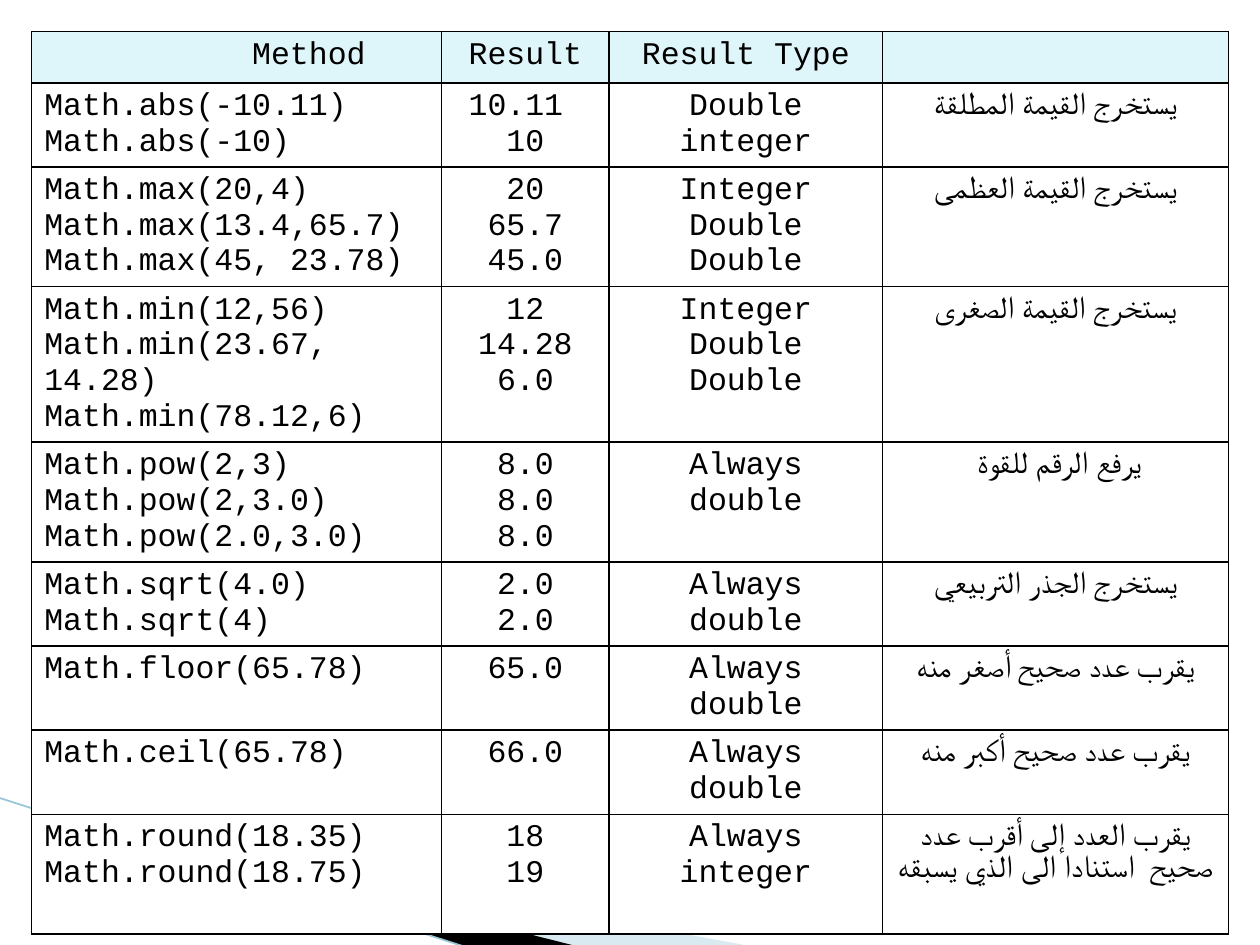
from dataclasses import dataclass

from lxml import etree
from pptx import Presentation
from pptx.dml.color import RGBColor
from pptx.enum import shapes, text
from pptx.oxml import ns
from pptx.util import Cm, Pt

FONT = "Courier New"
BLACK, WHITE, HEADER = "000000", "FFFFFF", "DEF5FA"
COLUMN_WIDTHS = (8.26, 3.38, 5.51, 6.98)
LINE_HEIGHT, CELL_PADDING = 0.72, 0.25
HEADER_INDENT = 4.19


@dataclass
class MethodRow:
    calls: tuple[str, ...]
    results: tuple[str, ...]
    types: tuple[str, ...]
    meaning: str
    lines: int
    rtl: bool = False


@dataclass
class Wedge:
    points: tuple[tuple[float, float], ...]
    color: str
    opacity: int = 100


ALWAYS_DOUBLE = ("Always", "double")
NUMBER_TYPES = ("Integer", "Double", "Double")

METHODS = (
    MethodRow(("Math.abs(-10.11)", "Math.abs(-10)"), ("10.11 ", "10"),
              ("Double", "integer"), "يستخرج القيمة المطلقة", 2),
    MethodRow(("Math.max(20,4)", "Math.max(13.4,65.7) Math.max(45, 23.78)"),
              ("20", "65.7", "45.0"), NUMBER_TYPES,
              "يستخرج القيمة العظمى", 3, rtl=True),
    MethodRow(("Math.min(12,56)", "Math.min(23.67, 14.28)", "Math.min(78.12,6)"),
              ("12", "14.28", "6.0"), NUMBER_TYPES,
              "يستخرج القيمة الصغرى", 4),
    MethodRow(("Math.pow(2,3)", "Math.pow(2,3.0)", "Math.pow(2.0,3.0)"),
              ("8.0", "8.0", "8.0"), ALWAYS_DOUBLE,
              "يرفع الرقم للقوة ", 3, rtl=True),
    MethodRow(("Math.sqrt(4.0)", "Math.sqrt(4)"), ("2.0", "2.0"),
              ALWAYS_DOUBLE, "يستخرج الجذر التربيعي", 2),
    MethodRow(("Math.floor(65.78)",), ("65.0",), ALWAYS_DOUBLE,
              "يقرب عدد صحيح أصغر منه", 2),
    MethodRow(("Math.ceil(65.78)",), ("66.0",), ALWAYS_DOUBLE,
              "يقرب عدد صحيح أكبر منه", 2),
    MethodRow(("Math.round(18.35)", "Math.round(18.75)"), ("18", "19"),
              ("Always", "integer"),
              "يقرب العدد إلى أقرب عدد صحيح  استنادا الى الذي يسبقه", 3),
)

WEDGES = (
    Wedge(((1.4, 16.53), (15.11, 19.07), (11.58, 19.07), (1.4, 16.51)), "A0CBDC", 40),
    Wedge(((1.35, 16.48), (11.61, 19.07), (9.45, 19.1), (1.37, 16.51)), BLACK),
)


def rgb(color: str) -> RGBColor:
    return RGBColor.from_string(color)


def add_wedge(s, wedge: Wedge) -> None:
    points = [(Cm(x), Cm(y)) for x, y in wedge.points]
    builder = s.shapes.build_freeform(*points[0], scale=1.0)
    builder.add_line_segments(points[1:], close=True)
    sp = builder.convert_to_shape()
    sp.shadow.inherit = False
    sp.line.fill.background()
    sp.fill.solid()
    sp.fill.fore_color.rgb = rgb(wedge.color)
    if wedge.opacity < 100:
        clr = sp.fill._xPr.find(".//" + ns.qn("a:srgbClr"))
        etree.SubElement(clr, ns.qn("a:alpha"), val=str(wedge.opacity * 1000))


def add_edge_line(s) -> None:
    line = s.shapes.add_connector(shapes.MSO_CONNECTOR.STRAIGHT,
                                  Cm(-0.03), Cm(16.08), Cm(9.42), Cm(19.1))
    line.line.color.rgb = rgb("97C5D8")
    line.line.width = Pt(0.95)
    etree.SubElement(line._element.spPr, ns.qn("a:effectLst"))


def style_cell(cell, fill: str) -> None:
    """Give the cell thin black borders and a plain fill."""
    tc_pr = cell._tc.get_or_add_tcPr()
    for side in ("lnL", "lnR", "lnT", "lnB"):
        ln = etree.SubElement(tc_pr, ns.qn(f"a:{side}"), w=str(Pt(1)))
        solid = etree.SubElement(ln, ns.qn("a:solidFill"))
        etree.SubElement(solid, ns.qn("a:srgbClr"), val=BLACK)
    cell.fill.solid()
    cell.fill.fore_color.rgb = rgb(fill)


def write_cell(cell, lines: tuple[str, ...], centred: bool = True,
               rtl: bool = False, indent: float = 0) -> None:
    tf = cell.text_frame
    for i, line in enumerate(lines):
        p = tf.add_paragraph() if i else tf.paragraphs[0]
        p.alignment = text.PP_ALIGN.CENTER if centred else text.PP_ALIGN.LEFT
        p_pr = p._p.get_or_add_pPr()
        if rtl:
            p_pr.set("rtl", "1")
        if indent:
            p_pr.set("marL", str(Cm(indent)))
        r = p.add_run()
        r.text = line
        r.font.name = FONT
        r.font.size = Pt(18)
        r.font.color.rgb = rgb(BLACK)


def row_height(lines: int) -> Cm:
    return Cm(lines * LINE_HEIGHT + CELL_PADDING)


def add_method_table(s) -> None:
    heights = [row_height(n) for n in (1, *(m.lines for m in METHODS))]
    table = s.shapes.add_table(len(heights), len(COLUMN_WIDTHS), Cm(0.64), Cm(0.64),
                               Cm(sum(COLUMN_WIDTHS)), sum(heights)).table
    for column, width in zip(table.columns, COLUMN_WIDTHS):
        column.width = Cm(width)
    for i, (row, height) in enumerate(zip(table.rows, heights)):
        row.height = height
        for cell in row.cells:
            style_cell(cell, WHITE if i else HEADER)

    write_cell(table.cell(0, 0), ("Method",), centred=False, indent=HEADER_INDENT)
    write_cell(table.cell(0, 1), ("Result",))
    write_cell(table.cell(0, 2), ("Result Type",))
    for i, method in enumerate(METHODS, start=1):
        write_cell(table.cell(i, 0), method.calls, centred=False)
        write_cell(table.cell(i, 1), method.results)
        write_cell(table.cell(i, 2), method.types)
        write_cell(table.cell(i, 3), (method.meaning,), rtl=method.rtl)


def main() -> None:
    prs = Presentation()
    prs.slide_width, prs.slide_height = Cm(25.4), Cm(19.05)
    s = prs.slides.add_slide(prs.slide_layouts[6])
    for wedge in WEDGES:
        add_wedge(s, wedge)
    add_edge_line(s)
    add_method_table(s)
    prs.save("out.pptx")


if __name__ == "__main__":
    main()
